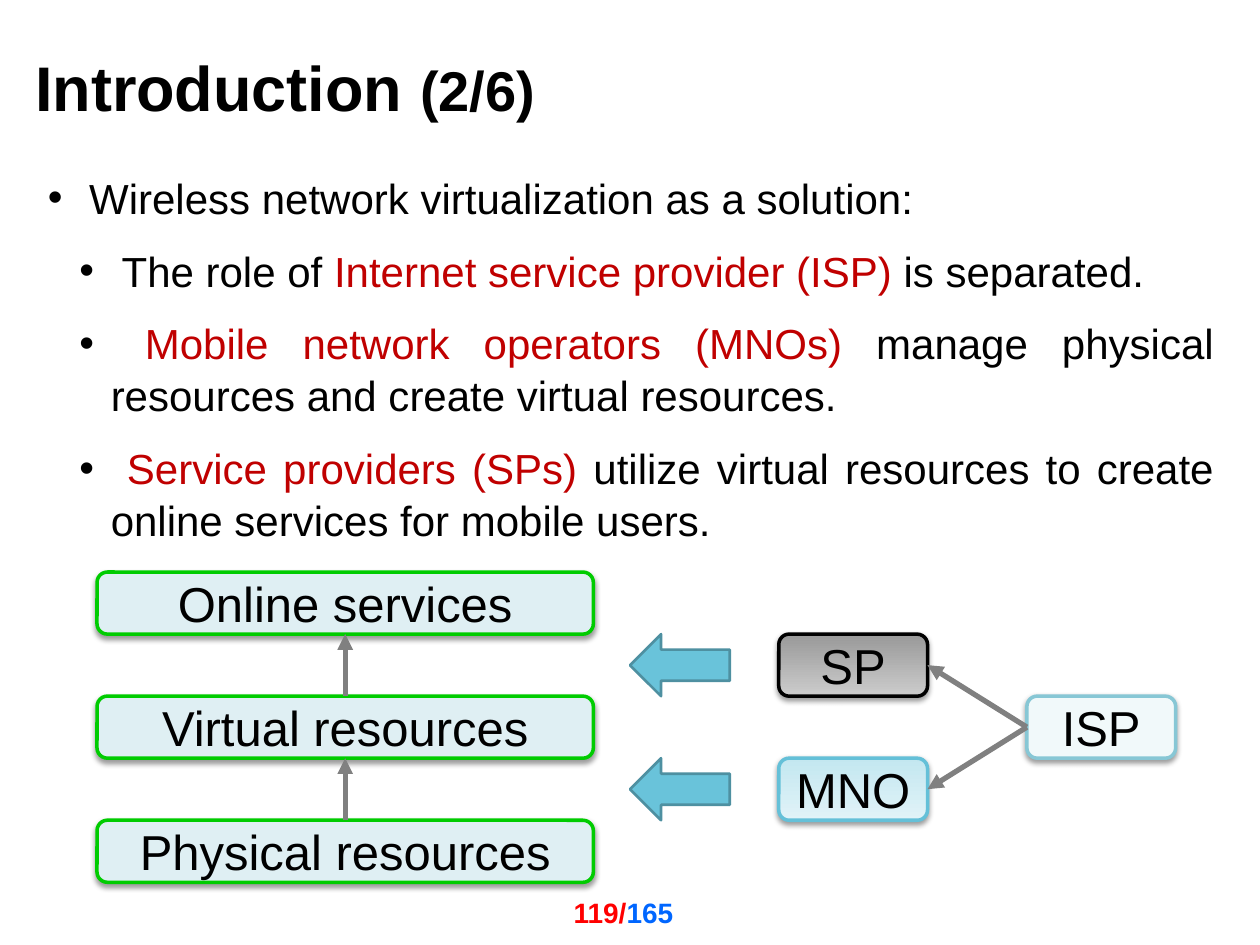
import pptx
import pptx.dml.color
import pptx.enum.shapes
import pptx.enum.text
import pptx.oxml
import pptx.oxml.ns
import pptx.util

Pt = pptx.util.Pt
SHAPES = pptx.enum.shapes.MSO_SHAPE
ALIGN = pptx.enum.text.PP_ALIGN

BLACK = "000000"
RED = "C00000"
PITCH = 35.45
DIAGRAM_TOP = 326.9
LAYER_LEFT, LAYER_WIDTH = 55.45, 8 * PITCH
ROLE_LEFT, ROLE_WIDTH = 445, 85

BULLETS = [
    (0, [(" Wireless network virtualization as a solution:", BLACK)]),
    (1, [(" The role of ", BLACK), ("Internet service provider (ISP) ", RED),
         ("is separated.", BLACK)]),
    (1, [(" ", BLACK), ("Mobile network operators (MNOs) ", RED),
         ("manage physical resources and create virtual resources.", BLACK)]),
    (1, [(" ", BLACK), ("Service providers (SPs) ", RED),
         ("utilize virtual resources to create online services for mobile users.", BLACK)]),
]


def color(value):
    return pptx.dml.color.RGBColor.from_string(value)


def row_top(row):
    return DIAGRAM_TOP + row * PITCH


def append_xml(parent, markup):
    namespace = pptx.oxml.ns.nsdecls("a")
    parent.append(pptx.oxml.parse_xml(markup.replace(" ", f" {namespace} ", 1)))


def add_run(paragraph, text, size, value, bold=False):
    run = paragraph.add_run()
    run.text = text
    run.font.name = "Arial"
    run.font.size = Pt(size)
    run.font.bold = bold
    run.font.color.rgb = color(value)


def add_text_box(slide, left, top, width, height):
    box = slide.shapes.add_textbox(Pt(left), Pt(top), Pt(width), Pt(height))
    box.text_frame.word_wrap = True
    return box.text_frame


def add_bold_line(slide, bounds, runs, alignment):
    paragraph = add_text_box(slide, *bounds).paragraphs[0]
    paragraph.alignment = alignment
    for text, size, value in runs:
        add_run(paragraph, text, size, value, bold=True)


def add_bullets(slide):
    frame = add_text_box(slide, 20.2, 94, 680.4, 225.4)
    for index, (level, runs) in enumerate(BULLETS):
        paragraph = frame.paragraphs[0] if index == 0 else frame.add_paragraph()
        paragraph.level = level
        paragraph.alignment = ALIGN.JUSTIFY
        paragraph.line_spacing = 1.03
        if index:
            paragraph.space_before = Pt(12)
        properties = paragraph._p.get_or_add_pPr()
        margin, hanging = (36, 18) if level else (17, 17)
        properties.set("marL", str(Pt(margin)))
        properties.set("indent", str(-Pt(hanging)))
        append_xml(properties, '<a:buFont typeface="Arial"/>')
        append_xml(properties, '<a:buChar char="•"/>')
        for text, value in runs:
            add_run(paragraph, text, 24, value)


def add_shape(slide, kind, left, row, width, line, line_width):
    shape = slide.shapes.add_shape(kind, Pt(left), Pt(row_top(row)), Pt(width), Pt(PITCH))
    shape.shadow.inherit = False
    shape.line.color.rgb = color(line)
    shape.line.width = Pt(line_width)
    return shape


def add_shadow(shape):
    effects = shape.element.spPr.find(pptx.oxml.ns.qn("a:effectLst"))
    append_xml(effects, f'<a:outerShdw blurRad="{Pt(3.1)}" dist="{Pt(1.6)}" dir="5400000" '
                        'rotWithShape="0"><a:srgbClr val="000000"><a:alpha val="38000"/>'
                        '</a:srgbClr></a:outerShdw>')


def add_label_box(slide, text, left, row, width, fills, line):
    shape = add_shape(slide, SHAPES.ROUNDED_RECTANGLE, left, row, width, line, 2)
    if len(fills) == 1:
        shape.fill.solid()
        shape.fill.fore_color.rgb = color(fills[0])
    else:
        shape.fill.gradient()
        shape.fill.gradient_angle = 90
        for stop, value in zip(shape.fill.gradient_stops, fills):
            stop.color.rgb = color(value)
    add_shadow(shape)
    frame = shape.text_frame
    frame.vertical_anchor = pptx.enum.text.MSO_ANCHOR.MIDDLE
    paragraph = frame.paragraphs[0]
    paragraph.alignment = ALIGN.CENTER
    add_run(paragraph, text, 28, BLACK)
    return shape


def add_block_arrow(slide, row):
    arrow = add_shape(slide, SHAPES.RIGHT_ARROW, 360, row, 57, "4E90A1", 1.5)
    arrow.rotation = 180
    arrow.fill.solid()
    arrow.fill.fore_color.rgb = color("69C3DA")


def connect(slide, start, start_site, end, end_site):
    connector = slide.shapes.add_connector(
        pptx.enum.shapes.MSO_CONNECTOR.STRAIGHT, 0, 0, 0, 0)
    connector.begin_connect(start, start_site)
    connector.end_connect(end, end_site)
    connector.line.color.rgb = color("808080")
    connector.line.width = Pt(3)
    properties = connector.element.spPr
    append_xml(properties.find(pptx.oxml.ns.qn("a:ln")), '<a:tailEnd type="triangle"/>')
    append_xml(properties, "<a:effectLst />")


def add_diagram(slide):
    online, virtual, physical = [
        add_label_box(slide, text, LAYER_LEFT, 2 * index, LAYER_WIDTH, ["DFEFF3"], "00CC00")
        for index, text in enumerate(
            ["Online services", "Virtual resources", "Physical resources"])]
    provider = add_label_box(slide, "ISP", ROLE_LEFT + 4 * PITCH, 2, ROLE_WIDTH,
                             ["F1F9FA"], "87C7D5")
    service = add_label_box(slide, "SP", ROLE_LEFT, 1, ROLE_WIDTH,
                            ["CCCCCC", "999999"], BLACK)
    operator = add_label_box(slide, "MNO", ROLE_LEFT, 3, ROLE_WIDTH,
                             ["E1F3F8", "C3E7F0"], "64C0D8")
    connect(slide, physical, 0, virtual, 2)
    connect(slide, virtual, 0, online, 2)
    for role in (service, operator):
        connect(slide, provider, 1, role, 3)
    for row in (1, 3):
        add_block_arrow(slide, row)


def main():
    presentation = pptx.Presentation()
    presentation.slide_width = Pt(720)
    presentation.slide_height = Pt(540)
    slide = presentation.slides.add_slide(presentation.slide_layouts[6])
    add_bold_line(slide, (286.6, 508.3, 105.1, 22.3),
                  [("119/", 16, "FF0000"), ("165", 16, "0066FF")], ALIGN.RIGHT)
    add_bold_line(slide, (13, 24, 638, 94),
                  [("Introduction ", 36, BLACK), ("(2/6)", 32, BLACK)], ALIGN.LEFT)
    add_bullets(slide)
    add_diagram(slide)
    presentation.save("out.pptx")


if __name__ == "__main__":
    main()
